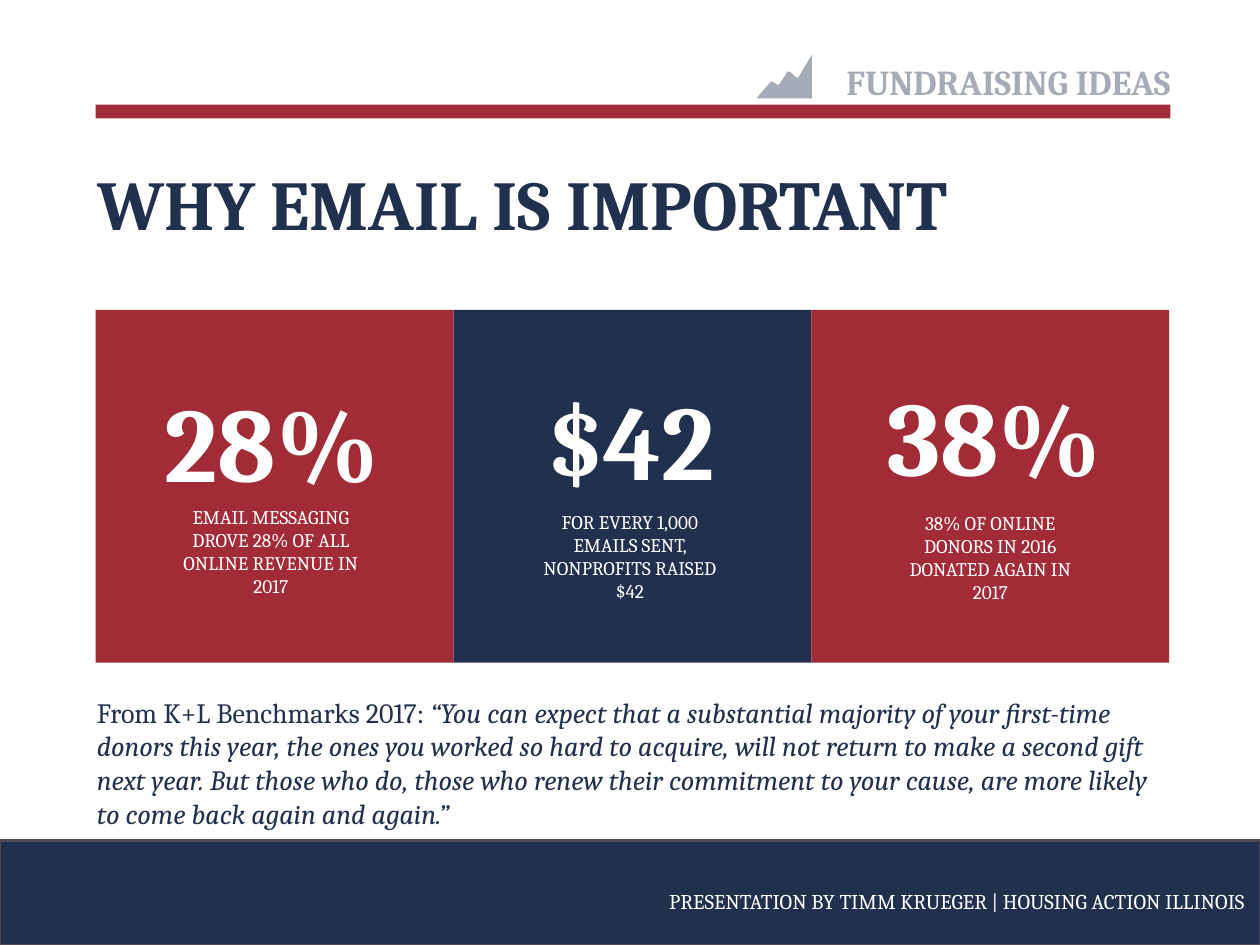
from dataclasses import dataclass

from lxml import etree
from pptx import Presentation
from pptx import util as u
from pptx.dml.color import RGBColor
from pptx.enum import shapes, text
from pptx.oxml import ns


@dataclass(frozen=True)
class Theme:
    navy: str = "21314D"
    red: str = "A22B38"
    white: str = "FFFFFF"
    outline: str = "514B55"
    font: str = "Cambria"
    title: float = 40
    section: float = 20
    figure: float = 60
    caption: float = 11
    quote: float = 16
    credit: float = 12
    faded: int = 40  # opacity in percent


THEME = Theme()
ALIGN = text.PP_ALIGN


class SlideBuilder:
    """Holds the theme and the slide being filled; lengths are points."""

    def __init__(self, slide, theme):
        self.slide = slide
        self.theme = theme

    def fade(self, shape):
        """Make every colour of a shape partly transparent."""
        for color in shape.element.iter(ns.qn("a:srgbClr")):
            alpha = etree.SubElement(color, ns.qn("a:alpha"))
            alpha.set("val", str(self.theme.faded * 1000))

    def paint(self, shape, color, line=None):
        shape.shadow.inherit = False
        shape.fill.solid()
        shape.fill.fore_color.rgb = RGBColor.from_string(color)
        if line:
            shape.line.color.rgb = RGBColor.from_string(line)
            shape.line.width = u.Pt(1.5)
        else:
            shape.line.fill.background()

    def rectangle(self, box, color, line=None):
        shape = self.slide.shapes.add_shape(
            shapes.MSO_SHAPE.RECTANGLE, *map(u.Pt, box))
        self.paint(shape, color, line)

    def polygon(self, points, color):
        corners = [(u.Pt(x), u.Pt(y)) for x, y in points]
        builder = self.slide.shapes.build_freeform(*corners[0], scale=1.0)
        builder.add_line_segments(corners[1:], close=True)
        shape = builder.convert_to_shape()
        self.paint(shape, color)
        self.fade(shape)

    def set_text(self, shape, runs, size, color, align=ALIGN.LEFT,
                 spacing=None):
        """Fill a shape with one paragraph of (wording, font values) runs."""
        frame = shape.text_frame
        frame_format = {"word_wrap": True,
                        "auto_size": text.MSO_AUTO_SIZE.SHAPE_TO_FIT_TEXT,
                        "vertical_anchor": text.MSO_ANCHOR.TOP}
        for name, value in frame_format.items():
            setattr(frame, name, value)
        paragraph = frame.paragraphs[0]
        paragraph.alignment = align
        if spacing:
            paragraph.line_spacing = spacing
        for wording, values in runs:
            run = paragraph.add_run()
            run.text = wording
            font_format = {"name": self.theme.font, "size": u.Pt(size), **values}
            for name, value in font_format.items():
                setattr(run.font, name, value)
            run.font.color.rgb = RGBColor.from_string(color)

    def text_box(self, box, runs, size, color, faded=False, **options):
        shape = self.slide.shapes.add_textbox(*map(u.Pt, box))
        self.set_text(shape, runs, size, color, **options)
        if faded:
            self.fade(shape)

    def title(self, box, wording):
        shape = self.slide.shapes.title
        for name, value in zip(("left", "top", "width", "height"), box):
            setattr(shape, name, u.Pt(value))
        self.set_text(shape, [(wording, {"bold": True})],
                      self.theme.title, self.theme.navy)


def main():
    presentation = Presentation()
    presentation.slide_width, presentation.slide_height = u.Pt(720), u.Pt(540)
    slide = presentation.slides.add_slide(presentation.slide_layouts[5])
    builder = SlideBuilder(slide, THEME)
    margin = 54.72

    # Header: section name, chart icon and rule
    builder.rectangle((margin, 59.76, 614.16, 7.92), THEME.red)
    builder.text_box((454.32, 30.96, 221.76, 31.68),
                     [("FUNDRAISING IDEAS", {"bold": True})],
                     THEME.section, THEME.navy, align=ALIGN.RIGHT, faded=True)
    builder.polygon([(463.9, 31.2), (456.2, 44.2), (455, 44.2), (451.4, 41),
                     (450, 41), (445.2, 48.4), (444.2, 48.4), (441.4, 46.6),
                     (440.6, 46.6), (432.7, 55.6), (432.9, 56.2),
                     (463.9, 56.2)], THEME.navy)

    builder.title((48.24, 87.84, 558, 55.44), "WHY EMAIL IS IMPORTANT")

    # Three panels: colour, figure and its box, caption and its left and top
    panel_width = 204.48
    panels = [
        (THEME.red, "28%", (84.96, 212.4, 140.4),
         "EMAIL MESSAGING DROVE 28% OF ALL ONLINE REVENUE IN 2017",
         (95.76, 285.12)),
        (THEME.navy, "$42", (299.52, 210.96, 121.68),
         "FOR EVERY 1,000 EMAILS SENT, NONPROFITS RAISED $42",
         (300.96, 288)),
        (THEME.red, "38%", (498.24, 208.8, 139.68),
         "38% OF ONLINE DONORS IN 2016 DONATED AGAIN IN 2017",
         (506.88, 288.72)),
    ]
    for index, (color, figure, figure_box, caption, corner) in enumerate(panels):
        left = margin + index * panel_width
        builder.rectangle((left, 177.12, panel_width, 201.6), color)
        builder.text_box((*figure_box, 79.92), [(figure, {"bold": True})],
                         THEME.figure, THEME.white, align=ALIGN.CENTER)
        builder.text_box((*corner, 118.08, 60.48), [(caption, {})],
                         THEME.caption, THEME.white, align=ALIGN.CENTER)

    # Footer band, with the quote box reaching over its top edge
    builder.rectangle((0, 480.24, 720, 59.76), THEME.navy, THEME.outline)
    quote = ("“You can expect that a substantial majority of your first-time "
             "donors this year, the ones you worked so hard to acquire, will "
             "not return to make a second gift next year. But those who do, "
             "those who renew their commitment to your cause, are more likely "
             "to come back again and again.”")
    builder.text_box((48.24, 393.84, 621.36, 104.4),
                     [("From K+L Benchmarks 2017: ", {}),
                      (quote, {"italic": True})],
                     THEME.quote, THEME.navy)
    builder.text_box((330.48, 496.8, 388.08, 27.36),
                     [("PRESENTATION BY TIMM KRUEGER | HOUSING ACTION ILLINOIS",
                       {})],
                     THEME.credit, THEME.white, align=ALIGN.RIGHT, spacing=1.5)

    presentation.save("out.pptx")


if __name__ == "__main__":
    main()
